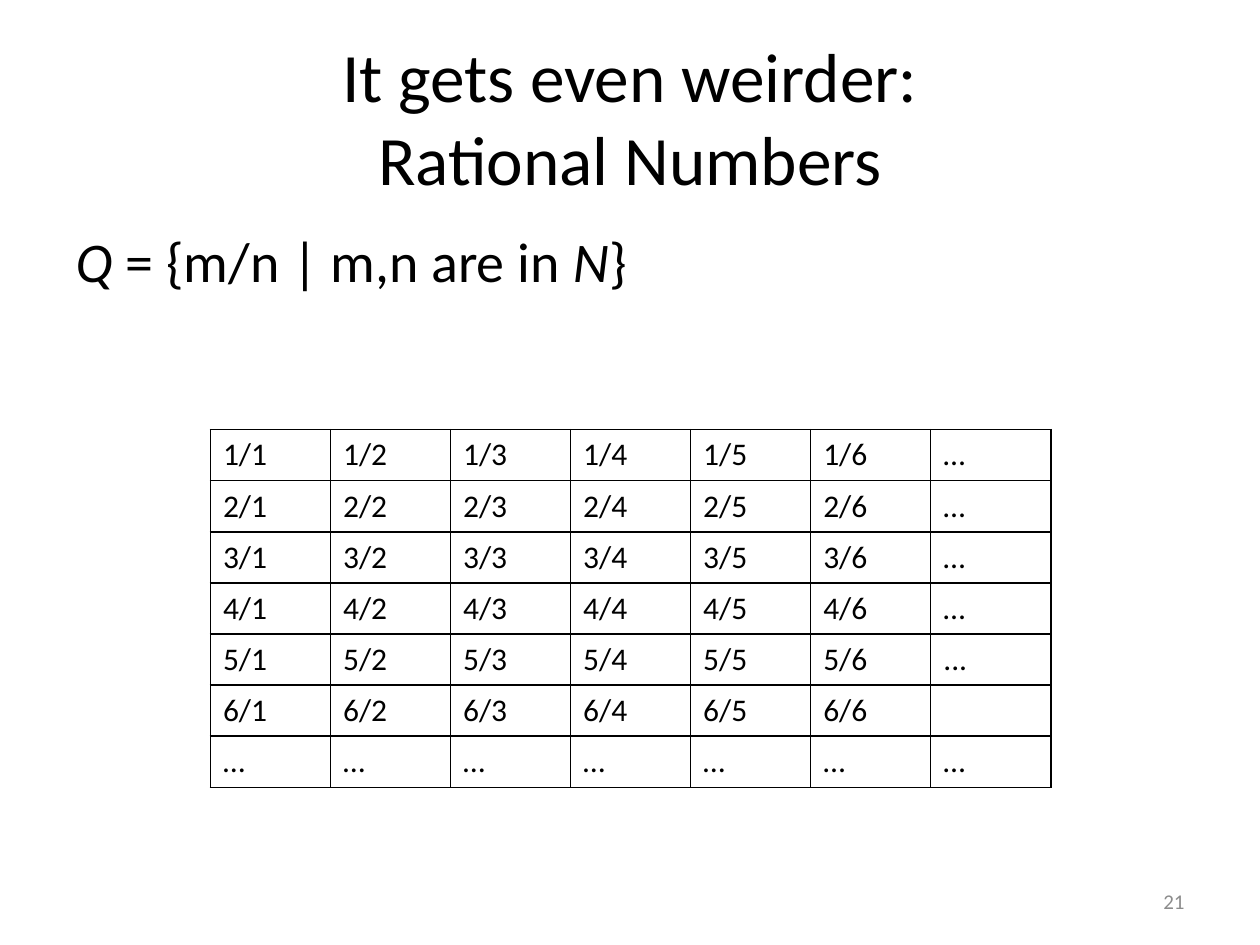
"""Build the slide on the table of rational numbers."""
import dataclasses

import pptx
import pptx.dml.color
import pptx.enum.text
import pptx.oxml
import pptx.oxml.ns
import pptx.util

Inches = pptx.util.Inches
Pt = pptx.util.Pt
Align = pptx.enum.text.PP_ALIGN
Anchor = pptx.enum.text.MSO_ANCHOR


@dataclasses.dataclass(frozen=True)
class Theme:
    font: str = "Calibri"
    ink: str = "000000"
    muted: str = "8C8C8C"
    title: float = 39.6
    body: float = 32
    cell: float = 18
    number: float = 12
    border: float = 1


THEME = Theme()


def place(shape, left, top, width, height):
    bounds = {"left": left, "top": top, "width": width, "height": height}
    for name, value in bounds.items():
        setattr(shape, name, Inches(value))


def set_frame(box, anchor):
    frame = box.text_frame
    settings = {
        "word_wrap": True,
        "auto_size": pptx.enum.text.MSO_AUTO_SIZE.NONE,
        "vertical_anchor": anchor,
    }
    for name, value in settings.items():
        setattr(frame, name, value)
    return frame.paragraphs[0]


def add_span(para, text, size, color=THEME.ink, italic=False):
    span = para.add_run()
    span.text = text
    settings = {"name": THEME.font, "size": Pt(size), "italic": italic}
    for name, value in settings.items():
        setattr(span.font, name, value)
    span.font.color.rgb = pptx.dml.color.RGBColor.from_string(color)


def fill_title(page, lines):
    box = page.shapes.title
    place(box, 0.5, 0.3, 9, 1.25)
    para = set_frame(box, Anchor.MIDDLE)
    para.alignment = Align.CENTER
    for index, line in enumerate(lines):
        if index:
            para.add_line_break()
        add_span(para, line, THEME.title)


def fill_body(page, spans):
    box = page.placeholders[1]
    place(box, 0.5, 1.75, 9, 4.95)
    para = set_frame(box, Anchor.TOP)
    properties = para._p.get_or_add_pPr()
    for name in ("marL", "indent"):
        properties.set(name, "0")
    pptx.oxml.ns.qn("a:buNone")
    properties.append(pptx.oxml.parse_xml(
        f'<a:buNone {pptx.oxml.ns.nsdecls("a")}/>'))
    for text, italic in spans:
        add_span(para, text, THEME.body, italic=italic)


def set_borders(cell):
    properties = cell._tc.get_or_add_tcPr()
    for side in ("lnL", "lnR", "lnT", "lnB"):
        properties.append(pptx.oxml.parse_xml(
            f'<a:{side} {pptx.oxml.ns.nsdecls("a")} w="{Pt(THEME.border)}">'
            f'<a:solidFill><a:srgbClr val="{THEME.ink}"/></a:solidFill>'
            f'</a:{side}>'))


def fraction_rows(count):
    rows = [[f"{top}/{bottom}" for bottom in range(1, count + 1)] + ["…"]
            for top in range(1, count + 1)]
    rows[4][-1] = "..."
    rows[5][-1] = ""
    return rows + [["…"] * (count + 1)]


def add_grid(page, rows):
    frame = page.shapes.add_table(
        len(rows), len(rows[0]),
        Inches(1.67), Inches(3.41), Inches(6.67), Inches(2.84))
    table = frame.table
    table.first_row = False
    table.horz_banding = False
    for row, texts in enumerate(rows):
        for column, text in enumerate(texts):
            cell = table.cell(row, column)
            set_borders(cell)
            cell.fill.background()
            add_span(cell.text_frame.paragraphs[0], text, THEME.cell)


def add_page_number(page, number):
    box = page.shapes.add_textbox(
        Inches(7.17), Inches(6.95), Inches(2.33), Inches(0.4))
    para = set_frame(box, Anchor.MIDDLE)
    para.alignment = Align.RIGHT
    add_span(para, number, THEME.number, THEME.muted)


def main():
    deck = pptx.Presentation()
    deck.slide_width = Inches(10)
    deck.slide_height = Inches(7.5)
    page = deck.slides.add_slide(deck.slide_layouts[1])
    fill_title(page, ["It gets even weirder:", "Rational Numbers"])
    fill_body(page, [("Q ", True), ("= {m/n | m,n are in ", False),
                     ("N", True), ("}", False)])
    add_grid(page, fraction_rows(6))
    add_page_number(page, "21")
    deck.save("out.pptx")


if __name__ == "__main__":
    main()
